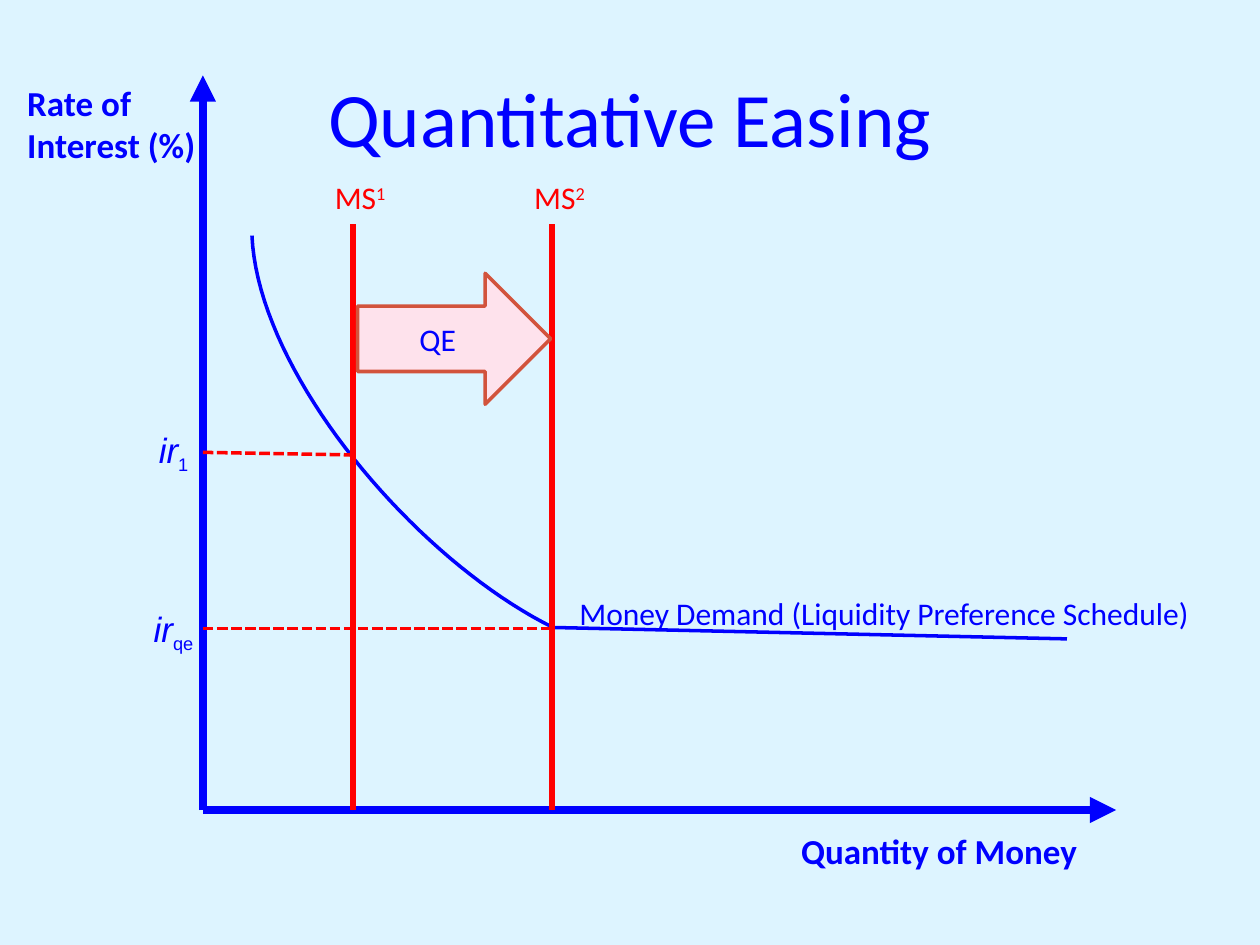
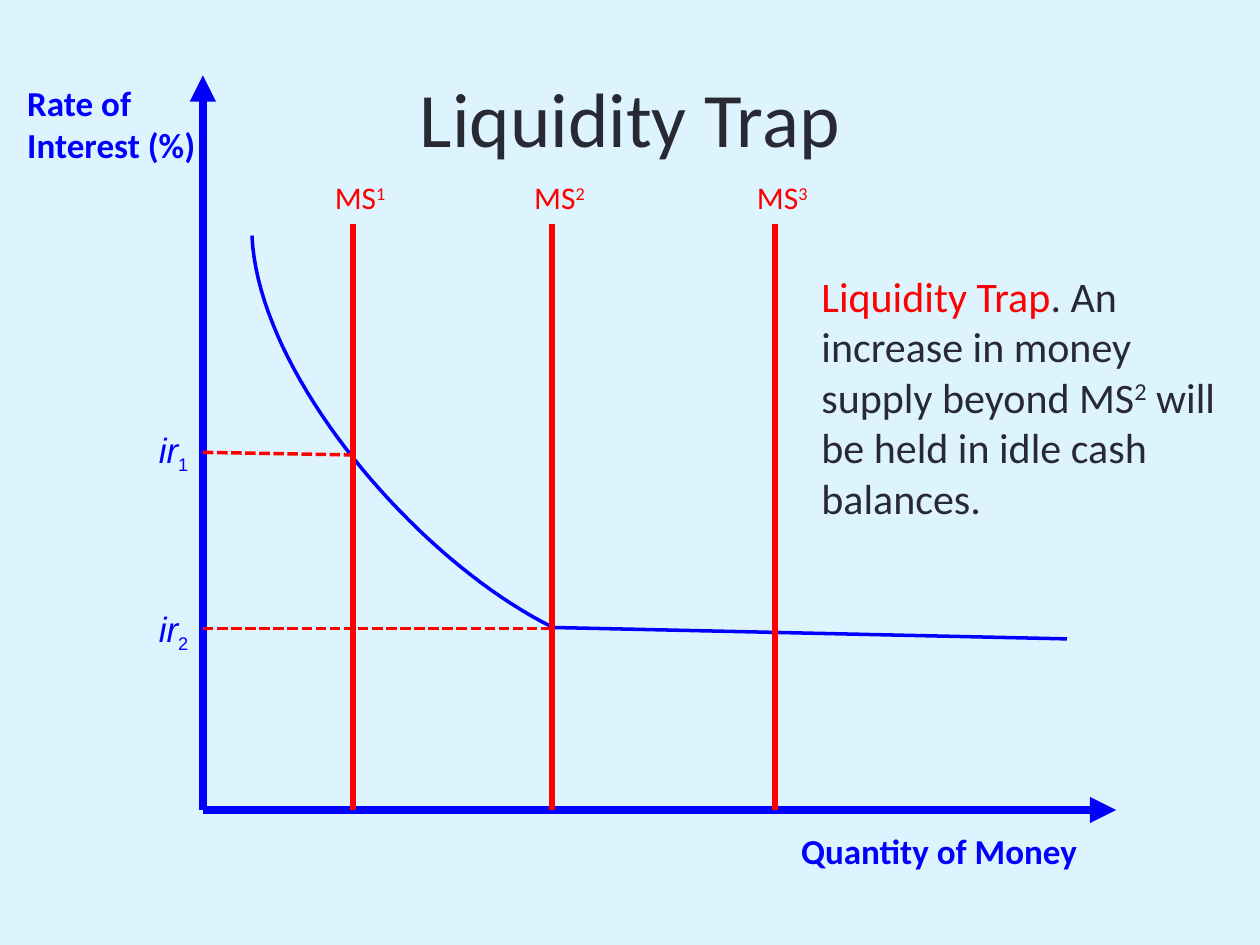
"""Build two money-market diagrams: quantitative easing and the liquidity trap."""
from dataclasses import dataclass

from pptx import Presentation
from pptx import util as u
from pptx.dml.color import RGBColor
from pptx.enum import dml, shapes, text
from pptx.oxml.ns import qn
from lxml import etree


@dataclass(frozen=True)
class Theme:
    """Colours, fonts and type sizes used on both slides."""
    sky: str = "DDF4FF"
    blue: str = "0000FF"
    red: str = "FF0000"
    ink: str = "292934"
    pink: str = "FEE2EC"
    rust: str = "D2533C"
    body_font: str = "Calibri"
    symbol_font: str = "Arial"
    title_size: int = 44
    note_size: int = 24
    axis_size: int = 20
    label_size: int = 18


theme = Theme()
CENTER = text.PP_ALIGN.CENTER
MIDDLE = text.MSO_ANCHOR.MIDDLE


def write(page, area, spans, size, font=theme.body_font, align=None, wrap=True, anchor=None, bold=False):
    """Add a text box; each span is (text, colour, baseline in percent)."""
    box = page.shapes.add_textbox(*[u.Cm(length) for length in area])
    frame = box.text_frame
    frame.word_wrap = wrap
    frame.vertical_anchor = anchor
    para = frame.paragraphs[0]
    para.alignment = align
    for words, colour, baseline in spans:
        span = para.add_run()
        span.text = words
        span.font.name = font
        span.font.size = u.Pt(size)
        span.font.bold = bold
        span.font.color.rgb = RGBColor.from_string(colour)
        if baseline:
            span._r.get_or_add_rPr().set("baseline", str(baseline * 1000))
    return para


def draw_line(page, start, end, colour, width, dashed=False, arrow=False):
    """Add a straight line, optionally dashed or with an arrowhead."""
    line = page.shapes.add_connector(
        shapes.MSO_CONNECTOR.STRAIGHT, *[u.Cm(length) for length in (*start, *end)])
    line.line.color.rgb = RGBColor.from_string(colour)
    line.line.width = u.Pt(width)
    if dashed:
        line.line.dash_style = dml.MSO_LINE.SQUARE_DOT
    if arrow:
        etree.SubElement(line.line._get_or_add_ln(), qn("a:tailEnd"), type="triangle")
    etree.SubElement(line._element.spPr, qn("a:effectLst"))


axis_x, axis_y = 4.09, 16.33
supply_top = 4.52
supply_x = [7.11, 11.13, 15.62]
rate_lines = [(9.12, 9.17), (12.67, 12.67)]

bend = [(5.08, 4.75), (5.21, 7.57), (8.41, 11.3), (11.15, 12.65)]
demand_end = (21.51, 12.88)
steps = 40
demand_points = []
for step in range(steps + 1):
    t = step / steps
    weights = ((1 - t) ** 3, 3 * t * (1 - t) ** 2, 3 * t ** 2 * (1 - t), t ** 3)
    demand_points.append(tuple(sum(w * point[i] for w, point in zip(weights, bend)) for i in (0, 1)))
demand_points.append(demand_end)
demand_points = [(u.Cm(x), u.Cm(y)) for x, y in demand_points]

slides = [
    ("Quantitative Easing", theme.blue, 2, ["1", "qe"]),
    ("Liquidity Trap", theme.ink, 3, ["1", "2"]),
]

deck = Presentation()
deck.slide_width, deck.slide_height = u.Cm(25.4), u.Cm(19.05)
pages = []

for title, title_colour, supply_count, rate_names in slides:
    page = deck.slides.add_slide(deck.slide_layouts[6])
    pages.append(page)
    page.background.fill.solid()
    page.background.fill.fore_color.rgb = RGBColor.from_string(theme.sky)
    write(page, (1.27, 0.76, 22.86, 3.18), [(title, title_colour, 0)],
          theme.title_size, align=CENTER, anchor=MIDDLE)

    for axis_end in [(axis_x, 1.52), (22.5, axis_y)]:
        draw_line(page, (axis_x, axis_y), axis_end, theme.blue, 5, arrow=True)
    for words, area in [("Rate of Interest (%)", (0.3, 1.52, 4.39, 1.96)),
                        ("Quantity of Money", (15.9, 16.59, 6.2, 1.12))]:
        write(page, area, [(words, theme.blue, 0)], theme.axis_size, bold=True)

    builder = page.shapes.build_freeform(*demand_points[0])
    builder.add_line_segments(demand_points[1:], close=False)
    demand = builder.convert_to_shape()
    demand.shadow.inherit = False
    demand.fill.background()
    demand.line.color.rgb = RGBColor.from_string(theme.blue)
    demand.line.width = u.Pt(2)

    for number, x in enumerate(supply_x[:supply_count], 1):
        draw_line(page, (x, supply_top), (x, axis_y), theme.red, 3.5)
        write(page, (x - 0.61, supply_top - 1.05, 1.8, 1.02),
              [("MS", theme.red, 0), (str(number), theme.red, 30)], theme.label_size)

    for name, x, (y_start, y_end) in zip(rate_names, supply_x, rate_lines):
        draw_line(page, (axis_x, y_start), (x, y_end), theme.red, 2, dashed=True)
        width = 1.14 if len(name) == 1 else 1.4
        para = write(page, (3.5 - width / 2, y_end - 0.66 if y_start != y_end else y_end - 0.55, width, 1.12),
                     [("ir", theme.blue, 0), (name, theme.blue, -25)], theme.axis_size,
                     font=theme.symbol_font, align=CENTER, wrap=False)
        symbol, subscript = para.runs
        symbol.font.italic = True
        subscript.font.size = u.Pt(theme.label_size)

easing_page, trap_page = pages

easing = easing_page.shapes.add_shape(
    shapes.MSO_SHAPE.RIGHT_ARROW, u.Cm(7.21), u.Cm(5.51), u.Cm(3.89), u.Cm(2.64))
easing.shadow.inherit = False
easing.fill.solid()
easing.fill.fore_color.rgb = RGBColor.from_string(theme.pink)
easing.line.color.rgb = RGBColor.from_string(theme.rust)
easing.line.width = u.Pt(2)
easing.text_frame.text = "QE"
easing.text_frame.vertical_anchor = MIDDLE
para = easing.text_frame.paragraphs[0]
para.alignment = CENTER
para.runs[0].font.name = theme.body_font
para.runs[0].font.size = u.Pt(theme.label_size)
para.runs[0].font.color.rgb = RGBColor.from_string(theme.blue)

write(easing_page, (11.43, 11.86, 13, 1.02),
      [("Money Demand (Liquidity Preference Schedule)", theme.blue, 0)], theme.label_size)

write(trap_page, (16.31, 5.33, 8.92, 5.38),
      [("Liquidity Trap", theme.red, 0),
       (". An increase in money supply beyond MS", theme.ink, 0),
       ("2", theme.ink, 30),
       (" will be held in idle cash balances.", theme.ink, 0)], theme.note_size)

deck.save("out.pptx")
